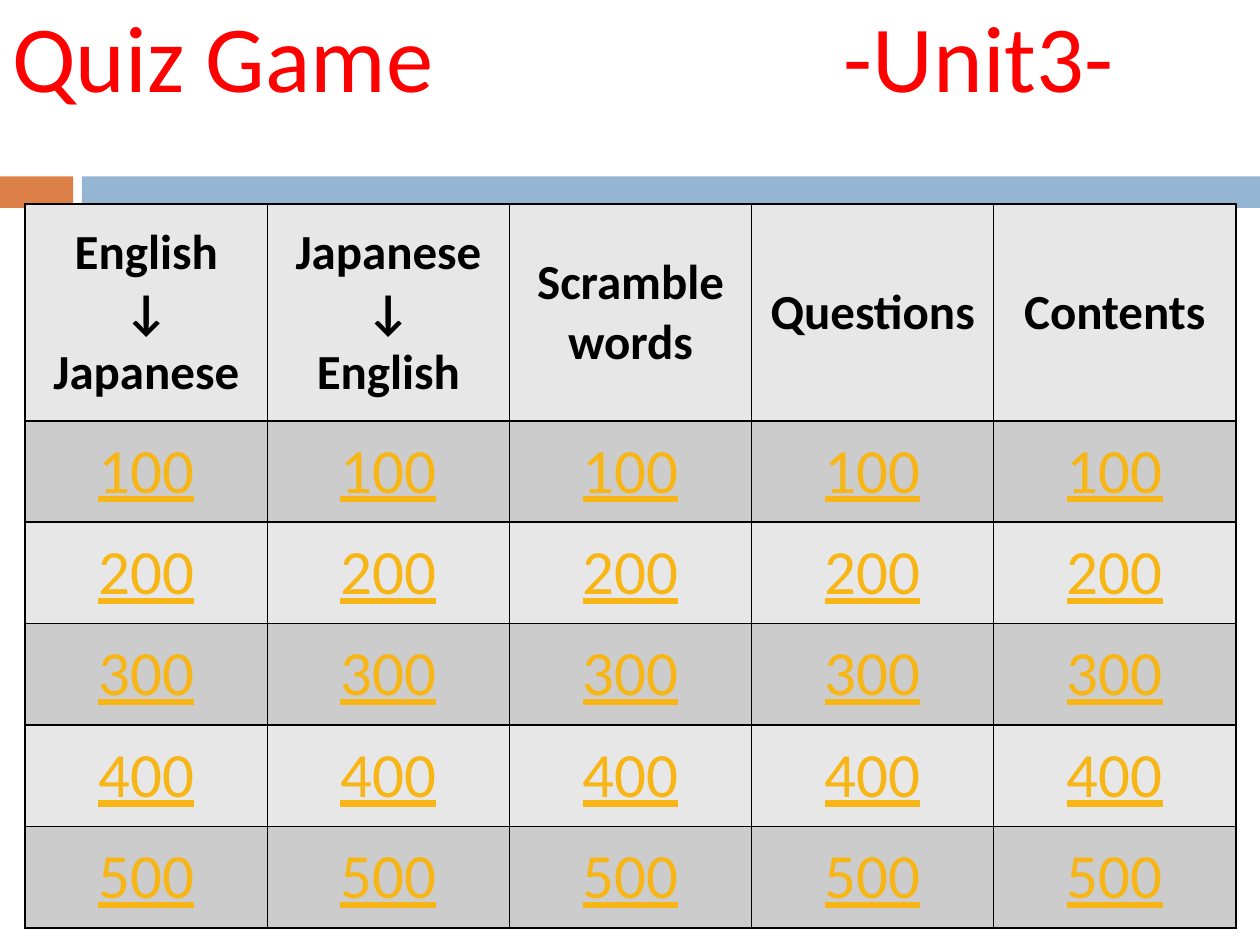
"""Build a quiz board slide with a title, a two-colour band and a grid of points."""
from dataclasses import dataclass

from lxml import etree
from pptx import Presentation
from pptx.dml.color import RGBColor
from pptx.enum.shapes import MSO_SHAPE
from pptx.enum.text import MSO_ANCHOR, PP_ALIGN
from pptx.oxml.ns import qn
from pptx.util import Inches, Pt

RECTANGLE = MSO_SHAPE.RECTANGLE
MIDDLE = MSO_ANCHOR.MIDDLE
LEFT, CENTER = PP_ALIGN.LEFT, PP_ALIGN.CENTER
BLANK_LAYOUT = 6

TITLE = "Quiz Game\t-Unit3-"
CATEGORIES = ["English\n↓\nJapanese", "Japanese\n↓\nEnglish", "Scramble words", "Questions", "Contents"]
POINTS = [100, 200, 300, 400, 500]


@dataclass(frozen=True)
class Theme:
    font: str = "Calibri"
    title_size: int = 54
    category_size: int = 28
    points_size: int = 36
    border_width: int = 1
    title: str = "FF0000"
    category: str = "000000"
    points: str = "F7B615"
    border: str = "000000"
    accent: str = "DD8047"
    band: str = "94B6D2"
    light_row: str = "E7E7E7"
    dark_row: str = "CCCCCC"


def write_text(text_frame, text, *, font, size, color, align=LEFT, bold=False, underline=False):
    for index, line in enumerate(text.split("\n")):
        paragraph = text_frame.paragraphs[0] if index == 0 else text_frame.add_paragraph()
        paragraph.alignment = align
        run = paragraph.add_run()
        run.text = line
        run.font.name = font
        run.font.size = Pt(size)
        run.font.bold = bold
        run.font.underline = underline
        run.font.color.rgb = RGBColor.from_string(color)


class SlideBuilder:
    def __init__(self, slide, theme):
        self.slide = slide
        self.theme = theme

    def add_band(self, left, top, width, height, color):
        shape = self.slide.shapes.add_shape(
            RECTANGLE, Inches(left), Inches(top), Inches(width), Inches(height))
        shape.shadow.inherit = False
        shape.fill.solid()
        shape.fill.fore_color.rgb = RGBColor.from_string(color)
        shape.line.fill.background()

    def add_title(self, left, top, width, height, text, tab_stop):
        text_box = self.slide.shapes.add_textbox(
            Inches(left), Inches(top), Inches(width), Inches(height))
        text_frame = text_box.text_frame
        text_frame.word_wrap = True
        text_frame.vertical_anchor = MIDDLE
        write_text(text_frame, text, font=self.theme.font,
                   size=self.theme.title_size, color=self.theme.title)
        properties = text_frame.paragraphs[0]._p.get_or_add_pPr()
        tabs = etree.SubElement(properties, qn("a:tabLst"))
        etree.SubElement(tabs, qn("a:tab"), pos=str(Inches(tab_stop)), algn="l")

    def add_board(self, left, top, width, row_heights, rows):
        column_count = len(rows[0])
        table = self.slide.shapes.add_table(
            len(rows), column_count, Inches(left), Inches(top),
            Inches(width), Inches(sum(row_heights))).table
        for column in table.columns:
            column.width = Inches(width / column_count)
        for row, height in zip(table.rows, row_heights):
            row.height = Inches(height)
        for row_index, texts in enumerate(rows):
            for column_index, text in enumerate(texts):
                self.format_cell(table.cell(row_index, column_index), text, row_index)

    def format_cell(self, cell, text, row_index):
        theme = self.theme
        is_header = row_index == 0
        cell.vertical_anchor = MIDDLE
        write_text(cell.text_frame, text, font=theme.font, align=CENTER,
                   size=theme.category_size if is_header else theme.points_size,
                   color=theme.category if is_header else theme.points,
                   bold=is_header, underline=not is_header)
        self.add_borders(cell)
        cell.fill.solid()
        cell.fill.fore_color.rgb = RGBColor.from_string(
            theme.dark_row if row_index % 2 else theme.light_row)

    def add_borders(self, cell):
        properties = cell._tc.get_or_add_tcPr()
        for side in ("lnL", "lnR", "lnT", "lnB"):
            line = etree.SubElement(properties, qn(f"a:{side}"), w=str(Pt(self.theme.border_width)))
            fill = etree.SubElement(line, qn("a:solidFill"))
            etree.SubElement(fill, qn("a:srgbClr"), val=self.theme.border)


def main():
    presentation = Presentation()
    presentation.slide_width = Inches(10)
    presentation.slide_height = Inches(7.5)
    theme = Theme()
    slide = presentation.slides.add_slide(presentation.slide_layouts[BLANK_LAYOUT])
    builder = SlideBuilder(slide, theme)

    builder.add_band(0, 1.4, 0.58, 0.25, theme.accent)
    builder.add_band(0.65, 1.4, 9.35, 0.25, theme.band)
    builder.add_title(0, -0.03, 10, 0.93, TITLE, tab_stop=6.6)
    point_rows = [[str(points)] * len(CATEGORIES) for points in POINTS]
    row_heights = [1.72] + [0.805] * len(POINTS)
    builder.add_board(0.2, 1.62, 9.61, row_heights, [CATEGORIES] + point_rows)

    presentation.save("out.pptx")


if __name__ == "__main__":
    main()
